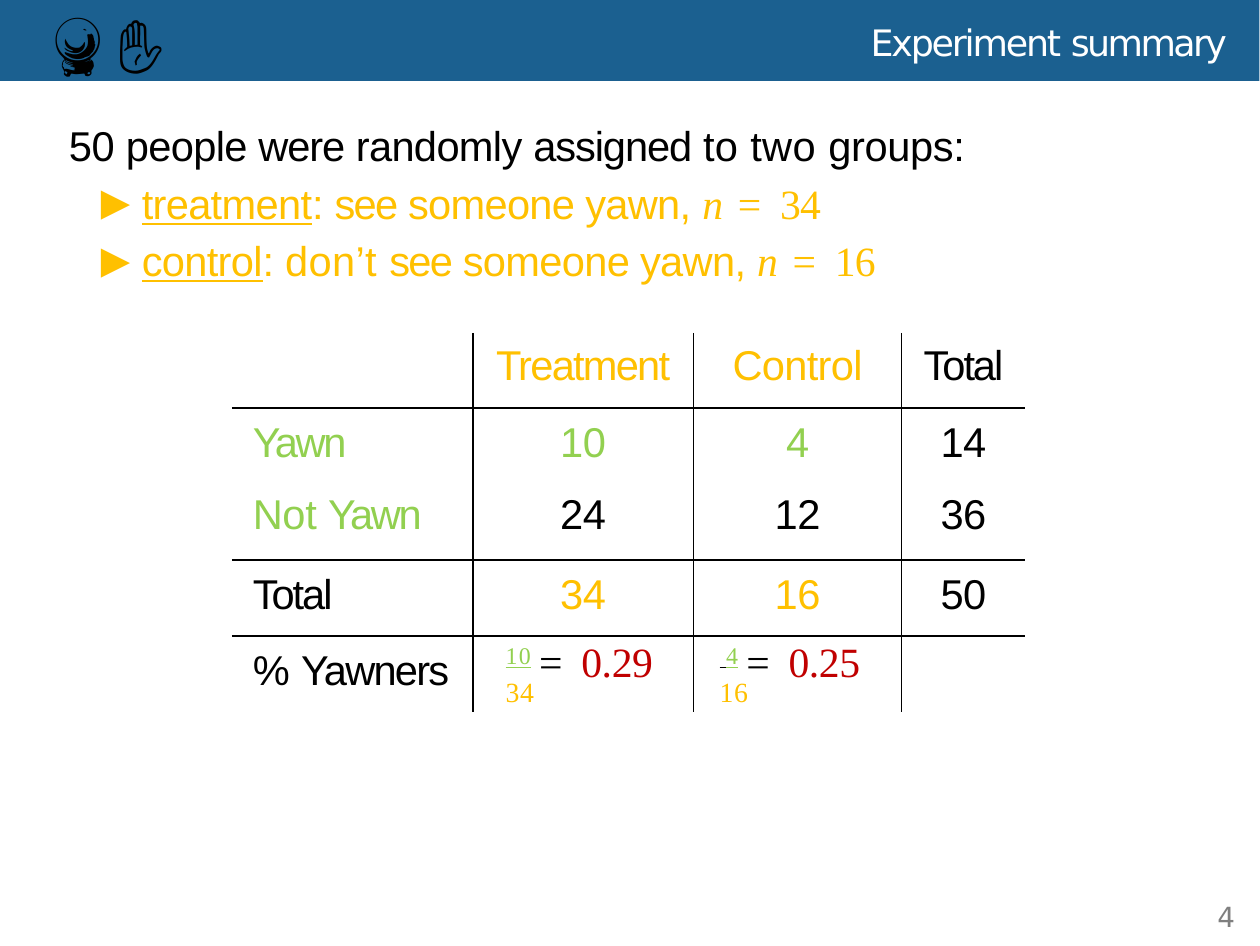
"""Build the experiment summary slide with its yawning table."""
from lxml import etree
from pptx import Presentation
from pptx import util as u
from pptx.dml.color import RGBColor
from pptx.enum import shapes, text
from pptx.oxml.ns import qn

PX = 3657.6
BLUE = RGBColor(0x1B, 0x60, 0x90)
GOLD = RGBColor(0xFF, 0xC0, 0x00)
GREEN = RGBColor(0x92, 0xD0, 0x50)
RED = RGBColor(0xC0, 0x00, 0x00)
GRAY = RGBColor(0x7F, 0x7F, 0x7F)
BLACK = RGBColor(0, 0, 0)
WHITE = RGBColor(0xFF, 0xFF, 0xFF)
SANS, SERIF = "DejaVu Sans", "Times New Roman"
LEFT, MID = text.PP_ALIGN.LEFT, text.PP_ALIGN.CENTER

COLS = [241, 221, 208, 124]
ROWS = [75, 152, 76, 76]
HEADS = [("Treatment", GOLD, -0.5), ("Control", GOLD, -0.2), ("Total", BLACK, -0.6)]
LABELS = [
    [],
    [[("Yawn", GREEN, -0.7)], [("Not ", GREEN, -0.1), ("Yawn", GREEN, -0.7)]],
    [[("Total", BLACK, -0.6)]],
    [[("% ", BLACK, -0.1), ("Yawners", BLACK, -0.5)]],
]
COUNTS = [
    [("10", GREEN), ("24", BLACK), ("34", GOLD)],
    [("4", GREEN), ("12", BLACK), ("16", GOLD)],
    [("14", BLACK), ("36", BLACK), ("50", BLACK)],
]
SHARES = [("10", "34", "0.29", 33), ("4", "16", "0.25", 26)]


def px(n):
    """Turn pixels into EMU."""
    return u.Emu(round(n * PX))


def write(par, words, hue, gap=0, size=12, face="Arial", slant=False, line=False, rise=0):
    """Add one formatted run to a paragraph."""
    run = par.add_run()
    run.text = words
    font = run.font
    font.size, font.name = u.Pt(size), face
    font.color.rgb = hue
    font.italic, font.underline = slant, line
    props = run._r.get_or_add_rPr()
    props.set("spc", str(round(gap * 100)))
    if rise:
        props.set("baseline", str(rise * 1000))


def space(par, before, align=LEFT, inset=0, hang=0):
    """Set the spacing, alignment and indents of a paragraph."""
    par.space_before, par.alignment = u.Pt(before), align
    props = par._p.get_or_add_pPr()
    props.set("marL", str(px(inset)))
    props.set("indent", str(-px(hang)))


def bullet(par):
    """Give a paragraph a triangle bullet."""
    props = par._p.get_or_add_pPr()
    etree.SubElement(props, qn("a:buSzPct"), val="92000")
    etree.SubElement(props, qn("a:buFont"), typeface="DejaVu Serif")
    etree.SubElement(props, qn("a:buChar"), char="▶")


def frame(shape, top=0, wrap=True):
    """Clear the insets of a shape and return its text frame."""
    tf = shape.text_frame
    tf.margin_left = tf.margin_right = tf.margin_bottom = 0
    tf.margin_top = px(top)
    tf.word_wrap = wrap
    tf.auto_size = text.MSO_AUTO_SIZE.NONE
    tf.vertical_anchor = text.MSO_ANCHOR.TOP
    return tf


def box(slide, x, y, w, h, top=0, wrap=True):
    """Add a text box and return its text frame."""
    return frame(slide.shapes.add_textbox(px(x), px(y), px(w), px(h)), top, wrap)


def header(slide):
    """Draw the band, the title and the symbols."""
    band = slide.shapes.add_shape(shapes.MSO_SHAPE.RECTANGLE, 0, 0, px(1260), px(81))
    band.shadow.inherit = False
    band.fill.solid()
    band.fill.fore_color.rgb = BLUE
    band.line.fill.background()
    slide.shapes._spTree.insert(2, band._element)

    title = slide.shapes.title
    title.left, title.top, title.width, title.height = px(868), px(16), px(365), px(53)
    par = frame(title, 4).paragraphs[0]
    space(par, 1.4, inset=3)
    write(par, "Experiment ", WHITE, -0.6, 10.5, SANS)
    write(par, "summary", WHITE, -0.7, 10.5, SANS)

    par = box(slide, 54, -9, 140, 100, 12, False).paragraphs[0]
    write(par, "🔮 ✋", BLACK, size=18, face="Calibri")


def group(par, name, verb, count):
    """Write the bulleted line of one group."""
    space(par, 2.2, inset=77, hang=41)
    bullet(par)
    write(par, name, GOLD, -0.2, line=True)
    for words, gap in [(": ", -0.2), (verb, 0.1), ("see ", -0.5), ("someone yawn, ", -0.2)]:
        if words:
            write(par, words, GOLD, gap)
    write(par, "n ", GOLD, 0.6, face=SERIF, slant=True)
    write(par, "= ", GOLD, 1.2, face=SERIF)
    write(par, count, GOLD, -0.2, face=SERIF)


def intro(slide):
    """Write the opening line and the two groups."""
    tf = box(slide, 65, 108, 960, 182, 12)
    par = tf.paragraphs[0]
    space(par, 3.2, inset=4)
    for words, gap in [("50 ", -0.1), ("people ", -0.2), ("were ", -0.3), ("randomly ", -0.2),
                       ("assigned ", -0.3), ("to two ", 0.1), ("groups:", -0.1)]:
        write(par, words, BLACK, gap)
    group(tf.add_paragraph(), "treatment", "", "34")
    group(tf.add_paragraph(), "control", "don’t ", "16")


def rule(cell, edge, show):
    """Draw or hide one border of a cell."""
    line = etree.SubElement(cell._tc.get_or_add_tcPr(), qn("a:ln" + edge), w="6350")
    if show:
        fill = etree.SubElement(line, qn("a:solidFill"))
        etree.SubElement(fill, qn("a:srgbClr"), val=str(BLACK))
    else:
        etree.SubElement(line, qn("a:noFill"))


def fill(cell, lines, align=MID, inset=0, first=3.4):
    """Write paragraphs of runs into a cell."""
    tf = cell.text_frame
    for i, runs in enumerate(lines):
        par = tf.add_paragraph() if i else tf.paragraphs[0]
        space(par, 7.2 if i else first, align, inset)
        for run in runs:
            write(par, *run)


def share(cell, part, whole, value, inset):
    """Write a stacked fraction and its value."""
    tf = cell.text_frame
    par = tf.paragraphs[0]
    space(par, 3.4, inset=inset)
    par.line_spacing = u.Pt(11.2)
    if len(part) < len(whole):
        write(par, " ", BLACK, 0.1, face=SERIF, line=True, rise=31)
    write(par, part, GREEN, 0.3, face=SERIF, line=True, rise=31)
    write(par, " ", BLACK, 0.3, face=SERIF, rise=31)
    write(par, "= ", BLACK, 1.2, face=SERIF)
    write(par, value, RED, -0.1, face=SERIF)
    par = tf.add_paragraph()
    space(par, 0, inset=inset)
    par.line_spacing = u.Pt(6.2)
    write(par, whole, GOLD, 0.2, 8, SERIF)


def grid(slide):
    """Add the table of counts and shares."""
    table = slide.shapes.add_table(len(ROWS), len(COLS), px(232), px(333),
                                   px(sum(COLS)), px(sum(ROWS))).table
    table.first_row = table.horz_banding = False
    for col, w in zip(table.columns, COLS):
        col.width = px(w)
    for r, h in enumerate(ROWS):
        table.rows[r].height = px(h)
        for c in range(len(COLS)):
            cell = table.cell(r, c)
            for edge, show in [("L", c > 0), ("R", c < len(COLS) - 1),
                               ("T", r > 0), ("B", r < len(ROWS) - 1)]:
                rule(cell, edge, show)
            cell.fill.background()
            cell.margin_left = cell.margin_right = cell.margin_bottom = 0
            cell.margin_top = px(12 if r else 10)
            cell.text_frame.paragraphs[0]._p.get_or_add_endParaRPr().set("sz", "1200")
        fill(table.cell(r, 0), LABELS[r], LEFT, 21)
    for c, (head, counts) in enumerate(zip(HEADS, COUNTS), 1):
        yawn, calm, total = [[(words, hue, -0.1)] for words, hue in counts]
        fill(table.cell(0, c), [[head]], first=3.1)
        fill(table.cell(1, c), [yawn, calm])
        fill(table.cell(2, c), [total])
    for c, parts in enumerate(SHARES, 1):
        share(table.cell(3, c), *parts)


def main():
    """Build and save the slide."""
    deck = Presentation()
    deck.slide_width = u.Pt(363)
    deck.slide_height = u.Pt(272.5)
    slide = deck.slides.add_slide(deck.slide_layouts[5])
    header(slide)
    intro(slide)
    grid(slide)
    par = box(slide, 1215, 897, 24, 40, 3).paragraphs[0]
    space(par, 0.6, inset=3)
    write(par, "4", GRAY, -0.7, 8, SANS)
    deck.save("out.pptx")


if __name__ == "__main__":
    main()
